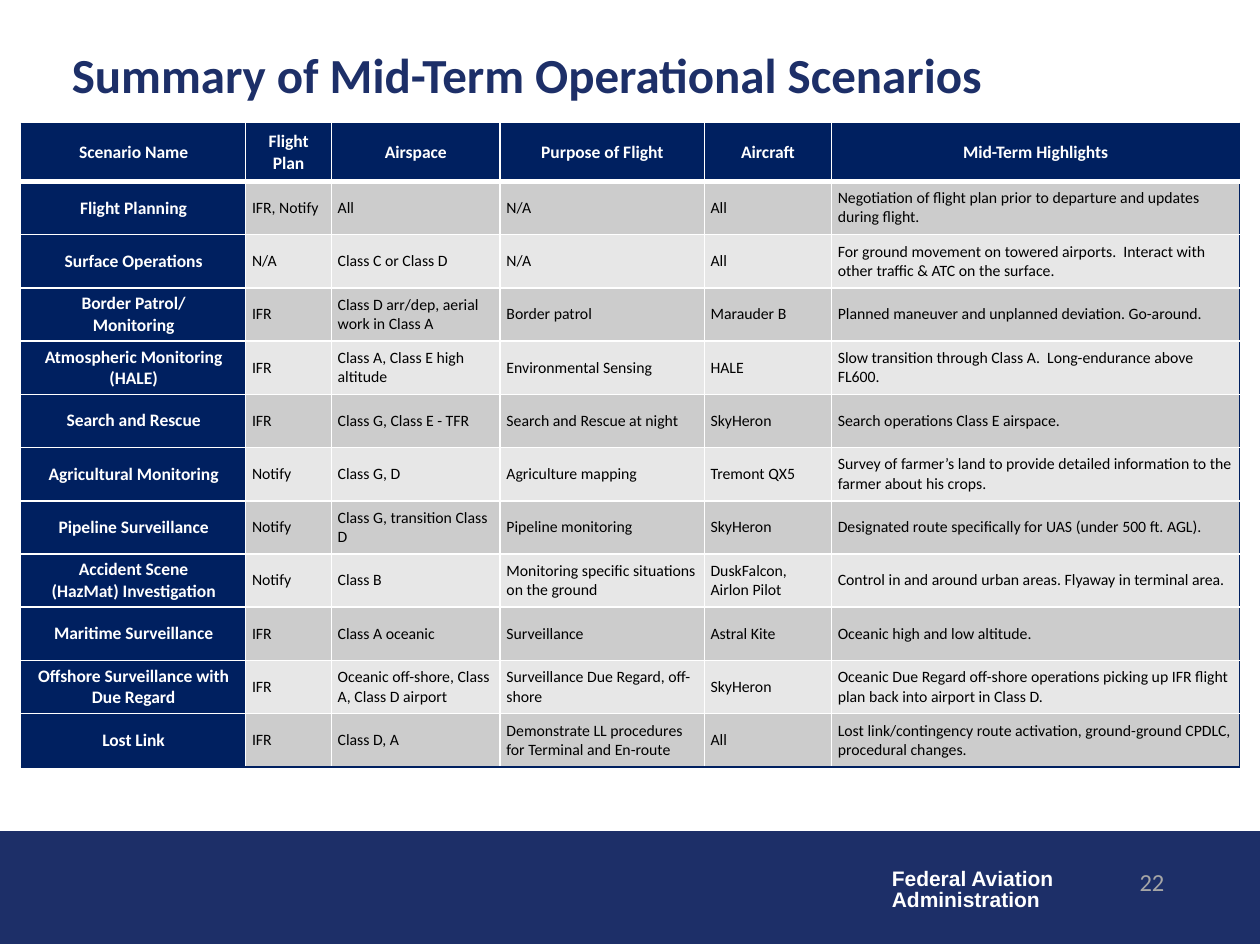
from typing import NamedTuple

from lxml import etree
from pptx import Presentation
from pptx.dml.color import RGBColor
from pptx.enum import shapes, text
from pptx.oxml import ns
from pptx.util import Inches, Pt

COLORS = {
    "brand": "1D2F68",
    "navy": "002060",
    "white": "FFFFFF",
    "black": "000000",
    "odd": "CCCCCC",
    "even": "E7E7E7",
    "number": "A6A6A6",
}


class Style(NamedTuple):
    size: float
    color: str
    bold: bool = False
    font: str = "Calibri"
    align: text.PP_ALIGN = text.PP_ALIGN.LEFT
    spacing: float = 1.0


class Scenario(NamedTuple):
    name: str
    plan: str
    airspace: str
    purpose: str
    aircraft: str
    highlights: str


TITLE = Style(28, "brand", True)
AGENCY = Style(12, "white", True, "Arial", spacing=0.85)
NUMBER = Style(14, "number", align=text.PP_ALIGN.RIGHT)
HEADING = Style(10, "white", True, align=text.PP_ALIGN.CENTER)
BODY = Style(9, "black")

# Table content; a line break starts a new paragraph
HEADER = Scenario("Scenario Name", "Flight Plan", "Airspace", "Purpose of Flight",
                  "Aircraft", "Mid-Term Highlights")
SCENARIOS = [
    Scenario("Flight Planning", "IFR, Notify", "All", "N/A", "All",
             "Negotiation of flight plan prior to departure and updates during flight."),
    Scenario("Surface Operations", "N/A", "Class C or Class D", "N/A", "All",
             "For ground movement on towered airports.  Interact with other traffic & ATC "
             "on the surface."),
    Scenario("Border Patrol/\nMonitoring", "IFR", "Class D arr/dep, aerial work in Class A",
             "Border patrol", "Marauder B",
             "Planned maneuver and unplanned deviation. Go-around."),
    Scenario("Atmospheric Monitoring (HALE)", "IFR", "Class A, Class E high altitude",
             "Environmental Sensing", "HALE",
             "Slow transition through Class A.  Long-endurance above FL600."),
    Scenario("Search and Rescue", "IFR", "Class G, Class E - TFR",
             "Search and Rescue at night", "SkyHeron", "Search operations Class E airspace."),
    Scenario("Agricultural Monitoring", "Notify", "Class G, D", "Agriculture mapping",
             "Tremont QX5",
             "Survey of farmer’s land to provide detailed information to the farmer about "
             "his crops."),
    Scenario("Pipeline Surveillance", "Notify", "Class G, transition Class D",
             "Pipeline monitoring", "SkyHeron",
             "Designated route specifically for UAS (under 500 ft. AGL)."),
    Scenario("Accident Scene\n(HazMat) Investigation", "Notify", "Class B",
             "Monitoring specific situations on the ground", "DuskFalcon, Airlon Pilot",
             "Control in and around urban areas. Flyaway in terminal area."),
    Scenario("Maritime Surveillance", "IFR", "Class A oceanic", "Surveillance",
             "Astral Kite", "Oceanic high and low altitude."),
    Scenario("Offshore Surveillance with\nDue Regard", "IFR",
             "Oceanic off-shore, Class A, Class D airport",
             "Surveillance Due Regard, off-shore", "SkyHeron",
             "Oceanic Due Regard off-shore operations picking up IFR flight plan back into "
             "airport in Class D."),
    Scenario("Lost Link", "IFR", "Class D, A",
             "Demonstrate LL procedures for Terminal and En-route", "All",
             "Lost link/contingency route activation, ground-ground CPDLC, procedural changes."),
]
COLUMN_WIDTHS = [1.78, 0.68, 1.34, 1.62, 1.01, 3.24]
TABLE_HEIGHT, HEADER_HEIGHT = 5.11, 0.46


def rgb(name: str) -> RGBColor:
    return RGBColor.from_string(COLORS[name])


def write(frame, words: str, style: Style) -> None:
    for index, line in enumerate(words.split("\n")):
        para = frame.paragraphs[0] if index == 0 else frame.add_paragraph()
        para.alignment = style.align
        para.line_spacing = style.spacing
        span = para.add_run()
        span.text = line
        span.font.name = style.font
        span.font.size = Pt(style.size)
        span.font.bold = style.bold
        span.font.color.rgb = rgb(style.color)


def add_label(page, left: float, top: float, width: float, height: float,
              words: str, style: Style, wrap: bool = True) -> None:
    box = page.shapes.add_textbox(Inches(left), Inches(top), Inches(width), Inches(height))
    box.text_frame.word_wrap = wrap
    write(box.text_frame, words, style)


def set_borders(cell, borders: dict[str, tuple[str, float]]) -> None:
    """Put the side lines, keyed L, R, T and B, ahead of the cell fill."""
    properties = cell._tc.get_or_add_tcPr()
    for position, (side, (color, points)) in enumerate(borders.items()):
        line = etree.Element(ns.qn(f"a:ln{side}"), w=str(Pt(points)))
        fill = etree.SubElement(line, ns.qn("a:solidFill"))
        etree.SubElement(fill, ns.qn("a:srgbClr"), val=COLORS[color])
        properties.insert(position, line)


def format_cell(cell, words: str, row: int, column: int) -> None:
    heading = row == 0 or column == 0
    cell.vertical_anchor = text.MSO_ANCHOR.MIDDLE
    cell.margin_left = cell.margin_right = Inches(0.05)
    cell.margin_top = cell.margin_bottom = Inches(0.05 if row == 0 else 0.03)
    cell.fill.solid()
    cell.fill.fore_color.rgb = rgb("navy" if heading else "odd" if row % 2 else "even")
    write(cell.text_frame, words, HEADING if heading else BODY)

    # Navy outside the table, white inside, thick under the header
    last_column = column == len(COLUMN_WIDTHS) - 1
    last_row = row == len(SCENARIOS)
    set_borders(cell, {
        "L": ("navy" if column == 0 else "white", 1),
        "R": ("navy" if last_column else "white", 1),
        "T": ("navy" if row == 0 else "white", 3 if row == 1 else 1),
        "B": ("navy" if last_row else "white", 3 if row == 0 else 1),
    })


def add_scenario_table(page) -> None:
    rows = [HEADER, *SCENARIOS]
    table = page.shapes.add_table(
        len(rows), len(COLUMN_WIDTHS), Inches(0.17), Inches(0.98),
        Inches(sum(COLUMN_WIDTHS)), Inches(TABLE_HEIGHT)).table
    for column, width in zip(table.columns, COLUMN_WIDTHS):
        column.width = Inches(width)
    body_height = (TABLE_HEIGHT - HEADER_HEIGHT) / len(SCENARIOS)
    for row, scenario in enumerate(rows):
        table.rows[row].height = Inches(body_height if row else HEADER_HEIGHT)
        for column, words in enumerate(scenario):
            format_cell(table.cell(row, column), words, row, column)


def main() -> None:
    deck = Presentation()
    deck.slide_width, deck.slide_height = Inches(10), Inches(7.5)
    page = deck.slides.add_slide(deck.slide_layouts[5])

    # Footer band
    band = page.shapes.add_shape(shapes.MSO_SHAPE.RECTANGLE, Inches(0), Inches(6.6),
                                 Inches(10), Inches(0.89))
    band.shadow.inherit = False
    band.fill.solid()
    band.fill.fore_color.rgb = band.line.color.rgb = rgb("brand")
    band.line.width = Pt(0.75)
    add_label(page, 6.98, 6.85, 1.5, 0.44, "Federal Aviation\nAdministration", AGENCY, wrap=False)

    # Title
    title = page.shapes.title
    title.left, title.top = Inches(0.47), Inches(0.25)
    title.width, title.height = Inches(9.27), Inches(0.67)
    title.text_frame.vertical_anchor = text.MSO_ANCHOR.MIDDLE
    write(title.text_frame, "Summary of Mid-Term Operational Scenarios", TITLE)

    # Page number and table
    add_label(page, 7.26, 6.83, 2.08, 0.5, "22", NUMBER)
    add_scenario_table(page)

    deck.save("out.pptx")


if __name__ == "__main__":
    main()
